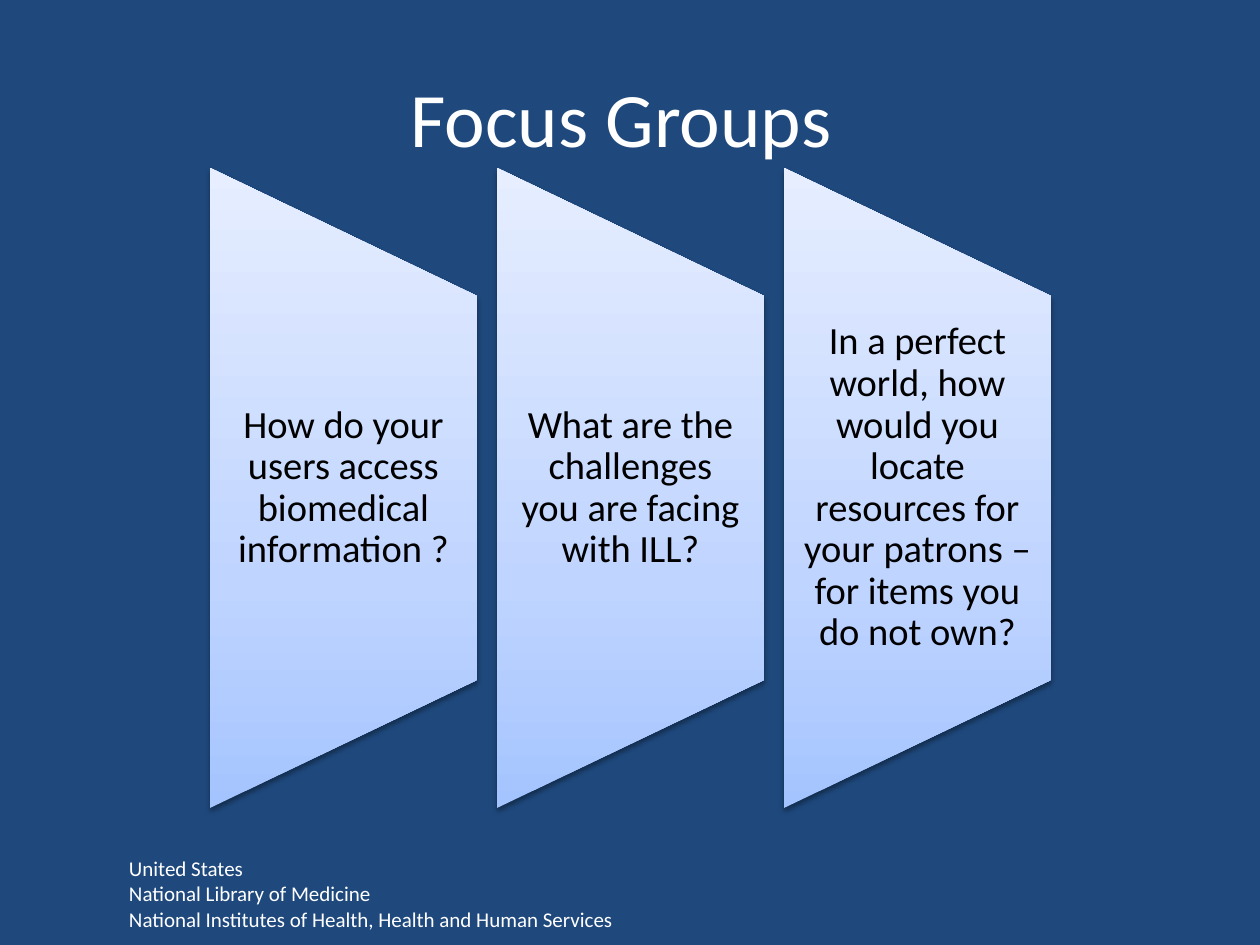
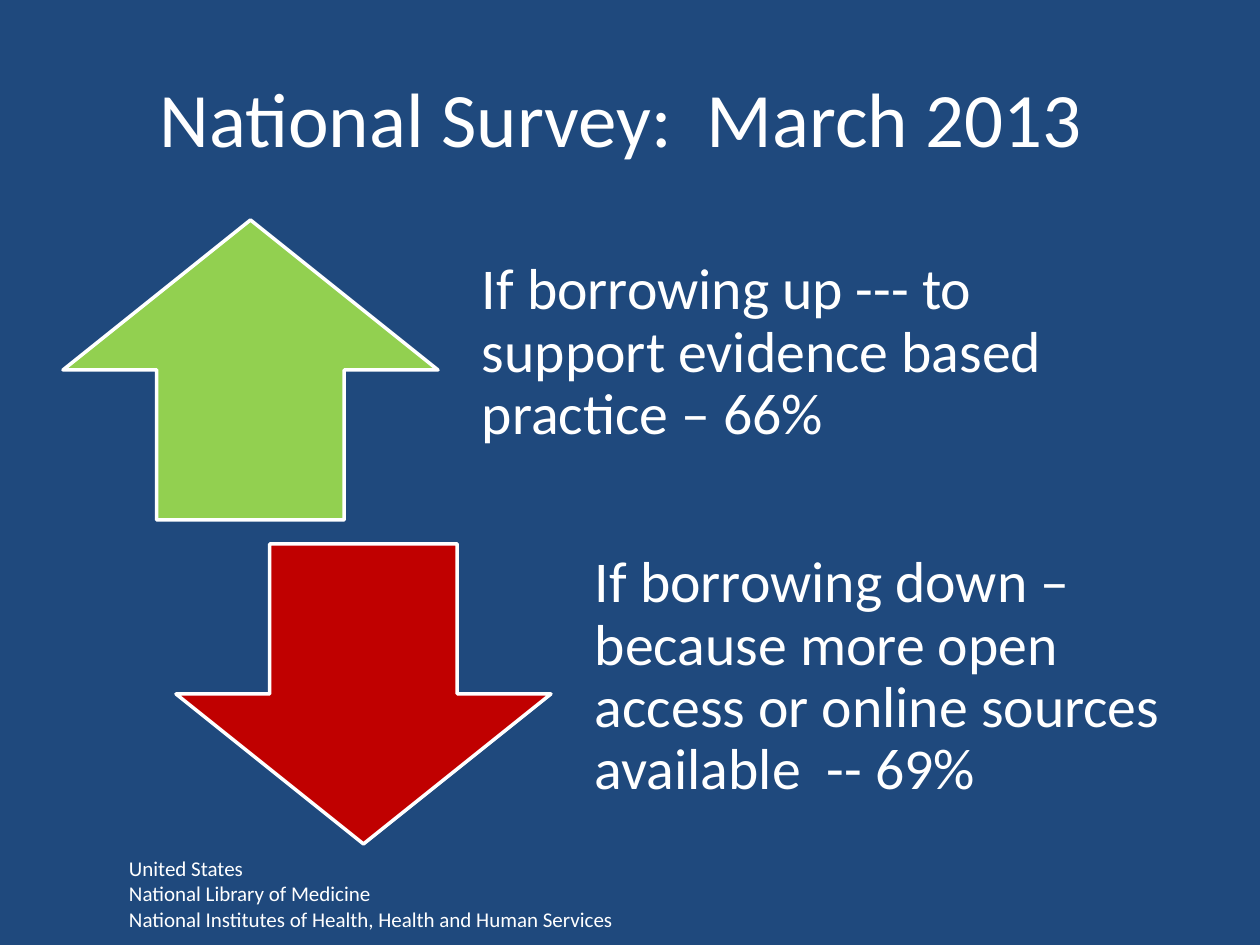
from lxml import etree
from pptx import Presentation
from pptx import util as u
from pptx.dml.color import RGBColor
from pptx.enum import shapes, text
from pptx.oxml import parse_xml
from pptx.oxml.ns import nsdecls, qn

PX = 914400 / 126
FONT = "Calibri"
NAVY = RGBColor(0x1F, 0x49, 0x7D)
WHITE = RGBColor(0xFF, 0xFF, 0xFF)
BLACK = RGBColor(0, 0, 0)
GREEN = RGBColor(0x92, 0xD0, 0x50)
RED = RGBColor(0xC0, 0, 0)
PANEL_STOPS = [(0, RGBColor(0xA4, 0xC4, 0xFF)),
               (35, RGBColor(0xBF, 0xD4, 0xFF)),
               (100, RGBColor(0xE6, 0xEE, 0xFF))]
FOOTER = ["United States", "National Library of Medicine",
          "National Institutes of Health, Health and Human Services"]


def px(*lengths):
    """Turn pixel lengths into EMU."""
    return [u.Emu(round(n * PX)) for n in lengths]


def add_text(s, box, lines, size, color=WHITE, align=text.PP_ALIGN.LEFT,
             spacing=None, insets=(13, 6, 13, 6)):
    """Add a wrapped, vertically centred text box with one paragraph per line."""
    tf = s.shapes.add_textbox(*px(*box)).text_frame
    tf.word_wrap = True
    tf.vertical_anchor = text.MSO_ANCHOR.MIDDLE
    tf.margin_left, tf.margin_top, tf.margin_right, tf.margin_bottom = px(*insets)
    for i, line in enumerate(lines):
        p = tf.add_paragraph() if i else tf.paragraphs[0]
        p.alignment = align
        p.line_spacing = spacing
        r = p.add_run()
        r.text = line
        r.font.name, r.font.size = FONT, u.Pt(size)
        r.font.color.rgb = color


def add_slide(prs, title):
    """Add a navy slide with its title and the shared footer."""
    s = prs.slides.add_slide(prs.slide_layouts[6])
    s.background.fill.solid()
    s.background.fill.fore_color.rgb = NAVY
    add_text(s, (63, 38, 1134, 157), [title], 44, align=text.PP_ALIGN.CENTER)
    add_text(s, (116, 861, 714, 65), FOOTER, 12)
    return s


def add_gradient_and_shadow(sp):
    """Give a shape the upright panel gradient and a soft shadow below."""
    stops = "".join(f'<a:gs pos="{pos * 1000}"><a:srgbClr val="{color}"/></a:gs>'
                    for pos, color in PANEL_STOPS)
    grad = parse_xml(f'<a:gradFill {nsdecls("a")} rotWithShape="0"><a:gsLst>{stops}'
                     '</a:gsLst><a:lin ang="16200000" scaled="0"/></a:gradFill>')
    sp.fill.background()
    sp.line.fill.background()
    sp.shadow.inherit = False
    spPr = sp.fill._xPr
    spPr.replace(spPr.find(qn("a:noFill")), grad)
    shadow = etree.SubElement(spPr.find(qn("a:effectLst")), qn("a:outerShdw"),
                              blurRad=str(u.Pt(3.1)), dist=str(u.Pt(1.6)),
                              dir="5400000", rotWithShape="0")
    black = etree.SubElement(shadow, qn("a:srgbClr"), val="000000")
    etree.SubElement(black, qn("a:alpha"), val="38000")


def add_panel(s, left, question):
    """Add a tapered panel, turned on its side, with a question over it."""
    top, width, height = 168, 267, 640
    turn = (height - width) / 2
    sp = s.shapes.add_shape(shapes.MSO_SHAPE.FLOWCHART_MANUAL_OPERATION,
                            *px(left - turn, top + turn, height, width))
    sp.rotation = 270
    add_gradient_and_shadow(sp)
    add_text(s, (left, top + height // 5, width, height * 3 // 5), [question], 22,
             color=BLACK, align=text.PP_ALIGN.CENTER, spacing=0.9,
             insets=(19, 0, 19, 0))


def add_arrow_row(s, left, top, kind, color, finding):
    """Add a block arrow with its survey finding to the right."""
    sp = s.shapes.add_shape(kind, *px(left, top, 375, 300))
    sp.shadow.inherit = False
    sp.fill.solid()
    sp.fill.fore_color.rgb = color
    sp.line.color.rgb = WHITE
    sp.line.width = u.Pt(2)
    add_text(s, (left + 386, top, 635, 300), [finding], 33, spacing=0.9,
             insets=(33, 0, 33, 33))


def main():
    """Build both slides and save the presentation."""
    prs = Presentation()
    prs.slide_width, prs.slide_height = px(1260, 945)

    s = add_slide(prs, "Focus Groups ")
    questions = ["How do your users access biomedical information ?",
                 "What are the challenges you are facing with ILL?",
                 "In a perfect world, how would you locate resources for your "
                 "patrons – for items you do not own?"]
    for i, question in enumerate(questions):
        add_panel(s, 210 + 287 * i, question)

    s = add_slide(prs, "National Survey:  March 2013 ")
    add_arrow_row(s, 63, 220, shapes.MSO_SHAPE.UP_ARROW, GREEN,
                  "If borrowing up --- to support evidence based practice – 66%")
    add_arrow_row(s, 176, 544, shapes.MSO_SHAPE.DOWN_ARROW, RED,
                  "If borrowing down – because more open access or online "
                  "sources available  -- 69%")

    prs.save("out.pptx")


if __name__ == "__main__":
    main()
